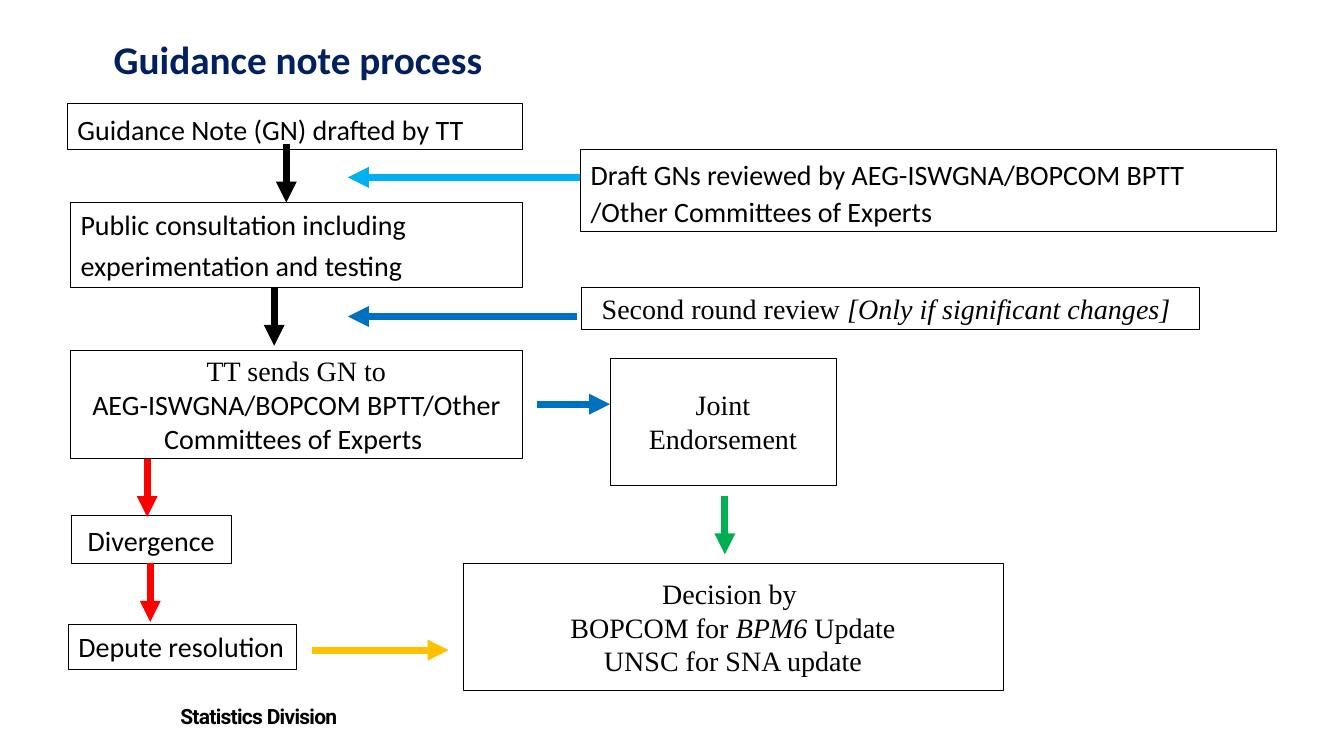
from lxml import etree
from pptx import Presentation, util as u
from pptx.dml.color import RGBColor
from pptx.enum import shapes, text
from pptx.oxml.ns import qn

C = {"black": "000000", "white": "FFFFFF", "navy": "002060", "red": "FF0000",
     "green": "00B050", "blue": "0070C0", "sky": "00B0F0", "gold": "FFC000"}
CAL, TNR = "Calibri", "Times New Roman"

prs = Presentation()
prs.slide_width, prs.slide_height = u.Inches(13.33), u.Inches(7.5)
s = prs.slides.add_slide(prs.slide_layouts[6])

# Grid: 133.3 columns by 75 rows
COL, ROW = prs.slide_width / 133.3, prs.slide_height / 75


def add_box(at, paras, font=CAL, size=20, color="black", bold=None, fill=None,
            line=None, center=False, grow=False, wrap=True, after=0, spacing=None):
    """Each paragraph is a list of (text, run settings); at is in columns and rows."""
    x, y, w, h = at
    sp = s.shapes.add_shape(shapes.MSO_SHAPE.RECTANGLE, round(x * COL), round(y * ROW),
                            round(w * COL), round(h * ROW))
    sp.shadow.inherit = False
    if fill:
        sp.fill.solid()
        sp.fill.fore_color.rgb = RGBColor.from_string(C[fill])
    else:
        sp.fill.background()
    if line:
        sp.line.color.rgb = RGBColor.from_string(C["black"])
        sp.line.width = u.Pt(line)
    else:
        sp.line.fill.background()
    tf = sp.text_frame
    tf.word_wrap = wrap
    tf.auto_size = text.MSO_AUTO_SIZE.SHAPE_TO_FIT_TEXT if grow else text.MSO_AUTO_SIZE.NONE
    tf.vertical_anchor = text.MSO_ANCHOR.MIDDLE if center else text.MSO_ANCHOR.TOP
    for i, runs in enumerate(paras):
        p = tf.paragraphs[0] if i == 0 else tf.add_paragraph()
        p.alignment = text.PP_ALIGN.CENTER if center else text.PP_ALIGN.LEFT
        p.space_after = u.Pt(after)
        p.line_spacing = spacing
        p.font.name, p.font.size, p.font.bold = font, u.Pt(size), bold
        p.font.color.rgb = RGBColor.from_string(C[color])
        for words, style in runs:
            r = p.add_run()
            r.text = words
            for key, value in style.items():
                setattr(r.font, key, value)
    return sp


def add_arrow(x1, y1, x2, y2, color):
    cx = s.shapes.add_connector(shapes.MSO_CONNECTOR.STRAIGHT, round(x1 * COL),
                                round(y1 * ROW), round(x2 * COL), round(y2 * ROW))
    cx.line.color.rgb = RGBColor.from_string(C[color])
    cx.line.width = u.Pt(5)
    etree.SubElement(cx.line._get_or_add_ln(), qn("a:tailEnd"), type="triangle")
    etree.SubElement(cx._element.spPr, qn("a:effectLst"))


# Footer and title
footer = add_box((16.9, 69.3, 58.4, 3.5), [[("Statistics Division", {})]], font="Roboto",
                 size=15, bold=True, fill="white", grow=True, after=18)
footer.text_frame.paragraphs[0].runs[0]._r.get_or_add_rPr().set("spc", "-50")
add_box((10.3, 3, 53.6, 8.8), [[("Guidance note process", {})]], size=28,
        color="navy", bold=True, grow=True)

# Drafting and consultation, read from the top left
note = dict(line=0.75, grow=True)
add_box((6.7, 10.3, 45.1, 4.5), [[("Guidance Note (GN) drafted by TT", {})]],
        after=12, spacing=1.1, **note)
add_box((7, 20.1, 44.8, 8.4), [[("Public consultation including", {})],
                               [("experimentation and testing", {})]], after=5, **note)
add_box((6.8, 62, 22.6, 4.4), [[("Depute resolution", {})]], wrap=False, **note)

# Reviews on the right
add_box((57.6, 14.8, 69, 8.2),
        [[("Draft GNs reviewed by AEG-ISWGNA/BOPCOM BPTT /Other Committees of Experts", {})]],
        after=12, spacing=1.1, **note)
step = dict(line=0.25, center=True)
add_box((57.6, 28.5, 61.3, 4.2),
        [[("Second round review ", {}), ("[Only if significant changes] ", {"italic": True})]],
        font=TNR, fill="white", **step)

# Endorsement, divergence and decision
add_box((7, 34.7, 44.8, 10.8),
        [[("TT sends GN to ", {"name": TNR}),
          ("AEG-ISWGNA/BOPCOM BPTT/Other Committees of Experts ", {})]], **step)
add_box((60.5, 35.5, 22.4, 12.6), [[("Joint Endorsement", {})]], font=TNR, **step)
add_box((7.1, 51.1, 15.8, 4.8), [[("Divergence", {})]], after=8, spacing=1.07, **step)
add_box((45.9, 55.9, 53.6, 12.6),
        [[("Decision by ", {})],
         [("BOPCOM for ", {}), ("BPM6 ", {"italic": True}), ("Update", {})],
         [("UNSC for SNA update", {})]], font=TNR, **step)

# Downward arrows, all the same length
for x, y, color in [(28.4, 14.3, "black"), (27.2, 28.5, "black"), (14.6, 45.5, "red"),
                    (14.9, 55.9, "red"), (71.9, 49.2, "green")]:
    add_arrow(x, y, x, y + 5.8, color)

# Sideways arrows
for x1, x2, y, color in [(53.3, 60.5, 40.1, "blue"), (30.9, 44.5, 64.5, "gold"),
                         (57.2, 34.5, 31.4, "blue"), (57.5, 34.5, 17.6, "sky")]:
    add_arrow(x1, y, x2, y, color)

prs.save("out.pptx")
